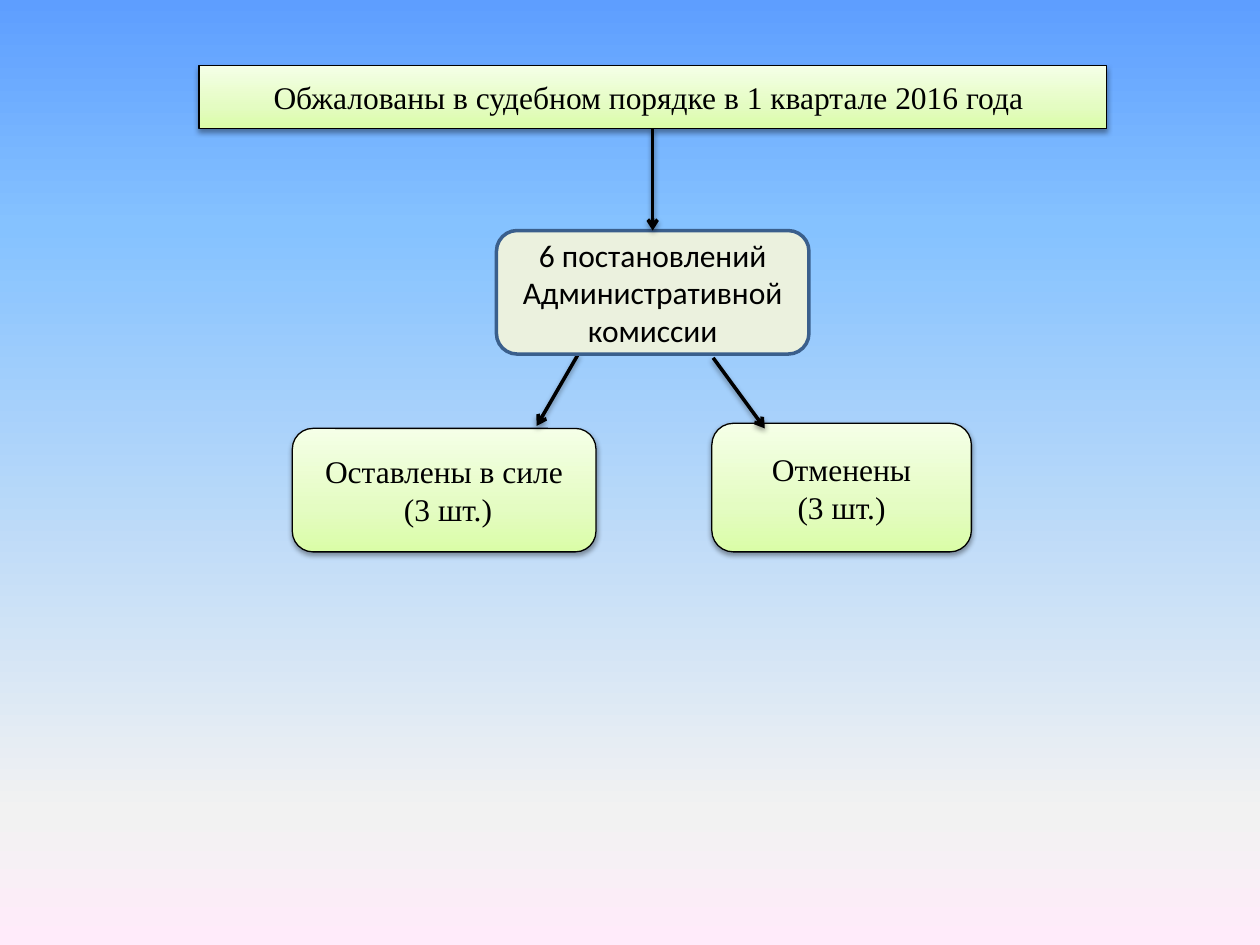
"""Build a flow chart of commission rulings appealed in court."""
from dataclasses import dataclass
from typing import Optional

from lxml import etree
from pptx import Presentation
from pptx import util as u
from pptx.dml.color import RGBColor
from pptx.enum import shapes, text
from pptx.oxml.ns import qn

SKY = [(0, "5E9EFF"), (24, "85C2FF"), (86, "F2F2F2"), (100, "FFEBFA")]
GREEN = [(0, "DAFDA7"), (35, "E4FCC2"), (100, "F5FFE7")]
BLACK = "000000"
RECT = shapes.MSO_SHAPE.RECTANGLE
ROUNDED = shapes.MSO_SHAPE.ROUNDED_RECTANGLE


@dataclass
class Box:
    left: float
    top: float
    width: float
    height: float
    lines: tuple[str, ...]
    preset: int = ROUNDED
    font: str = "Times New Roman"
    solid: Optional[str] = None
    outline: str = BLACK
    outline_width: float = 0.75


@dataclass
class Arrow:
    start: tuple[float, float]
    end: tuple[float, float]


TITLE = Box(1.58, 0.52, 7.2, 0.5,
            ("Обжалованы в судебном порядке в 1 квартале 2016 года ",), preset=RECT)
RULINGS = Box(3.94, 1.83, 2.48, 0.98, ("6 постановлений Административной комиссии",),
              font="Calibri", solid="EBF1DE", outline="3A5F8C", outline_width=2)
OUTCOMES = [
    Box(2.32, 3.4, 2.41, 0.98, ("Оставлены в силе", " (3 шт.)")),
    Box(5.65, 3.36, 2.06, 1.02, ("Отменены", "(3 шт.)")),
]
OUTCOME_ARROWS = [Arrow((4.59, 2.81), (4.26, 3.38)), Arrow((5.66, 2.84), (6.07, 3.4))]
TITLE_ARROW = Arrow((5.18, 1.02), (5.18, 1.83))


def color(value: str) -> RGBColor:
    return RGBColor.from_string(value)


def set_gradient(owner, fill, stops: list[tuple[int, str]], angle: float) -> None:
    fill.gradient()
    fill.gradient_angle = angle
    stop_list = next(owner._element.iter(qn("a:gsLst")))
    for old_stop in list(stop_list):
        stop_list.remove(old_stop)
    for position, value in stops:
        stop = etree.SubElement(stop_list, qn("a:gs"), pos=str(position * 1000))
        etree.SubElement(stop, qn("a:srgbClr"), val=value)


def add_shadow(effects) -> None:
    shadow = etree.SubElement(
        effects, qn("a:outerShdw"), blurRad=str(u.Pt(3.1)), dist=str(u.Pt(1.6)),
        dir="5400000", rotWithShape="0")
    tint = etree.SubElement(shadow, qn("a:srgbClr"), val=BLACK)
    etree.SubElement(tint, qn("a:alpha"), val="38000")


def add_box(slide, box: Box):
    shape = slide.shapes.add_shape(
        box.preset, u.Inches(box.left), u.Inches(box.top),
        u.Inches(box.width), u.Inches(box.height))
    shape.shadow.inherit = False
    if box.solid:
        shape.fill.solid()
        shape.fill.fore_color.rgb = color(box.solid)
    else:
        set_gradient(shape, shape.fill, GREEN, 90)
        add_shadow(shape._element.spPr.find(qn("a:effectLst")))
    shape.line.color.rgb = color(box.outline)
    shape.line.width = u.Pt(box.outline_width)

    frame = shape.text_frame
    frame.word_wrap = True
    frame.vertical_anchor = text.MSO_ANCHOR.MIDDLE
    for index, line in enumerate(box.lines):
        para = frame.add_paragraph() if index else frame.paragraphs[0]
        para.text = line
        para.alignment = text.PP_ALIGN.CENTER
        para.font.name = box.font
        para.font.size = u.Pt(18)
        para.font.color.rgb = color(BLACK)
    return shape


def add_arrow(slide, arrow: Arrow):
    connector = slide.shapes.add_connector(
        shapes.MSO_CONNECTOR.STRAIGHT, *map(u.Inches, arrow.start + arrow.end))
    connector.line.color.rgb = color(BLACK)
    connector.line.width = u.Pt(2)
    properties = connector._element.spPr
    etree.SubElement(properties.find(qn("a:ln")), qn("a:tailEnd"), type="arrow")
    add_shadow(etree.SubElement(properties, qn("a:effectLst")))
    return connector


def main() -> None:
    deck = Presentation()
    deck.slide_width, deck.slide_height = u.Inches(10), u.Inches(7.5)
    slide = deck.slides.add_slide(deck.slide_layouts[6])
    set_gradient(slide, slide.background.fill, SKY, 270)

    title = add_box(slide, TITLE)
    for outcome in OUTCOMES:
        add_box(slide, outcome)
    for arrow in OUTCOME_ARROWS:
        add_arrow(slide, arrow)
    rulings = add_box(slide, RULINGS)
    link = add_arrow(slide, TITLE_ARROW)
    link.begin_connect(title, 2)
    link.end_connect(rulings, 0)
    deck.save("out.pptx")


if __name__ == "__main__":
    main()
